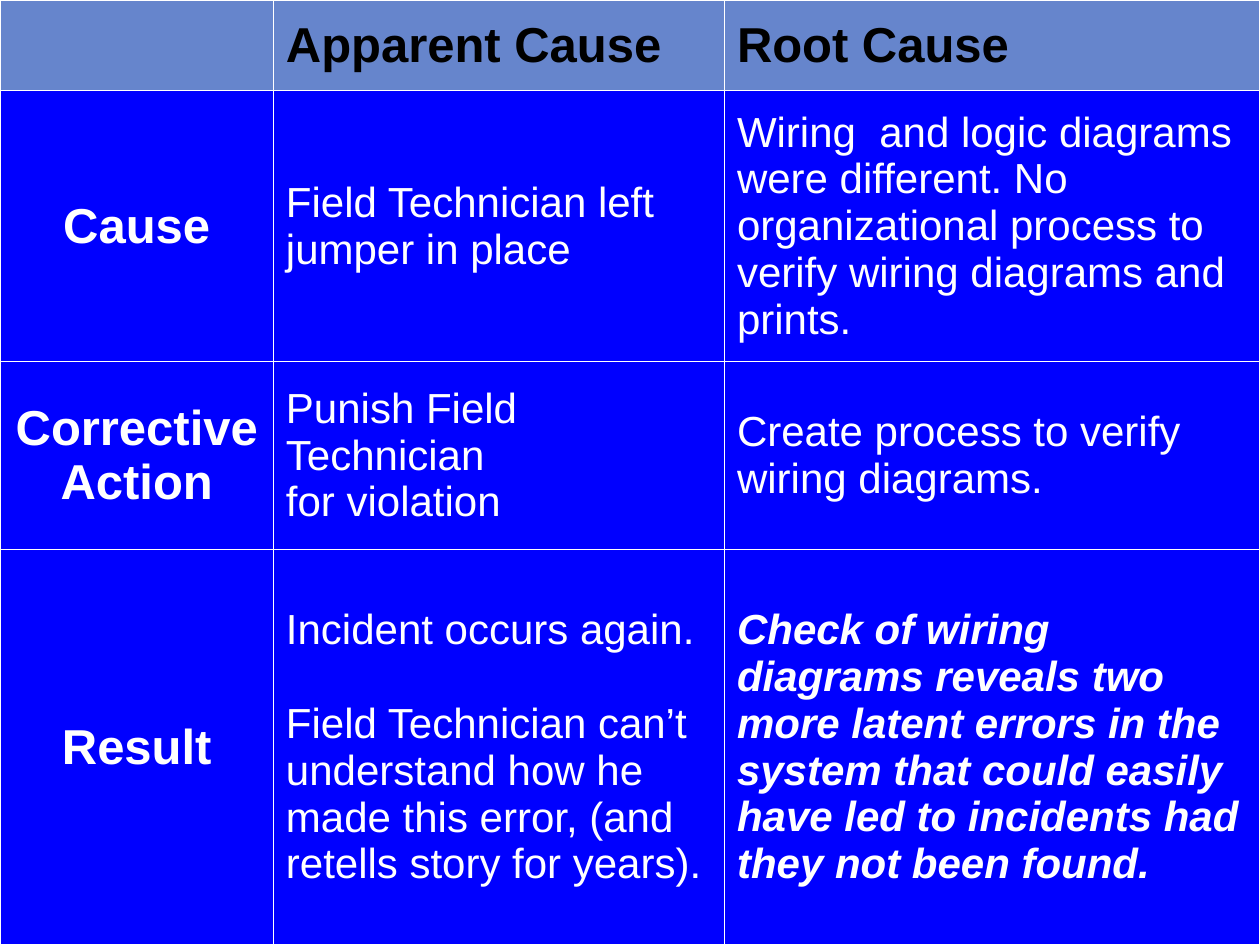
from lxml import etree
from pptx import Presentation
from pptx.dml.color import RGBColor as Rgb
from pptx.enum.text import MSO_ANCHOR as Anchor, PP_ALIGN as Align
from pptx.oxml.ns import qn
from pptx.util import Inches, Pt

COLORS = {"body": "0000FF", "head": "6685CC", "line": "FFFFFF",
          "dark": "000000", "light": "FFFFFF"}
COLS = [2.17, 3.58, 4.25]
ROWS = [0.72, 2.15, 1.49, 3.14]

# Text styles
HEAD = {"size": Pt(28), "bold": True, "italic": False}
BODY = {"size": Pt(24), "bold": False, "italic": False}
STRONG = {"size": Pt(24), "bold": True, "italic": True}

# Each cell holds a list of paragraphs
CELLS = [
    [[], ["Apparent Cause"], ["Root Cause"]],
    [["Cause"],
     ["Field Technician left jumper in place"],
     ["Wiring  and logic diagrams were different. No organizational "
      "process to verify wiring diagrams and prints."]],
    [["Corrective Action"],
     ["Punish Field Technician", "for violation"],
     ["Create process to verify wiring diagrams."]],
    [["Result"],
     ["Incident occurs again.",
      "Field Technician can’t understand how he made this error, "
      "(and retells story for years)."],
     ["Check of wiring diagrams reveals two more latent errors in the "
      "system that could easily have led to incidents had they not "
      "been found."]],
]
LAST = len(ROWS) - 1, len(COLS) - 1


def color(name):
    return Rgb.from_string(COLORS[name])


def add_edges(cell):
    """Draw the four borders, ahead of the fill as the schema asks."""
    props = cell._tc.get_or_add_tcPr()
    for i, side in enumerate(("lnL", "lnR", "lnT", "lnB")):
        line = etree.Element(qn(f"a:{side}"), w=str(Pt(1)))
        fill = etree.SubElement(line, qn("a:solidFill"))
        etree.SubElement(fill, qn("a:srgbClr"), val=COLORS["line"])
        props.insert(i, line)


def fill_cell(cell, row, col):
    cell.fill.solid()
    cell.fill.fore_color.rgb = color("body" if row else "head")
    cell.vertical_anchor = Anchor.MIDDLE
    add_edges(cell)

    style = HEAD if row == 0 or col == 0 else BODY
    if (row, col) == LAST:
        style = STRONG
    frame = cell.text_frame
    for i, text in enumerate(CELLS[row][col]):
        para = frame.add_paragraph() if i else frame.paragraphs[0]
        para.alignment = Align.CENTER if row and col == 0 else Align.LEFT
        # The result row sets its paragraphs one line apart
        if i and row == LAST[0]:
            para.space_before = Pt(27)
        run = para.add_run()
        run.text = text
        for key, value in style.items():
            setattr(run.font, key, value)
        run.font.name = "Arial"
        run.font.color.rgb = color("light" if row else "dark")


def add_grid(slide, left, top, width, height):
    frame = slide.shapes.add_table(len(ROWS), len(COLS), Inches(left),
                                   Inches(top), Inches(width), Inches(height))
    table = frame.table
    for col, size in zip(table.columns, COLS):
        col.width = Inches(size * width / sum(COLS))
    for row, size in zip(table.rows, ROWS):
        row.height = Inches(size * height / sum(ROWS))
    for r in range(len(ROWS)):
        for c in range(len(COLS)):
            fill_cell(table.cell(r, c), r, c)


def main():
    deck = Presentation()
    deck.slide_width, deck.slide_height = Inches(10), Inches(7.5)
    slide = deck.slides.add_slide(deck.slide_layouts[6])
    slide.background.fill.solid()
    slide.background.fill.fore_color.rgb = color("body")
    # Comparison table over the whole slide
    add_grid(slide, 0, 0, 10, 7.5)
    deck.save("out.pptx")


if __name__ == "__main__":
    main()
